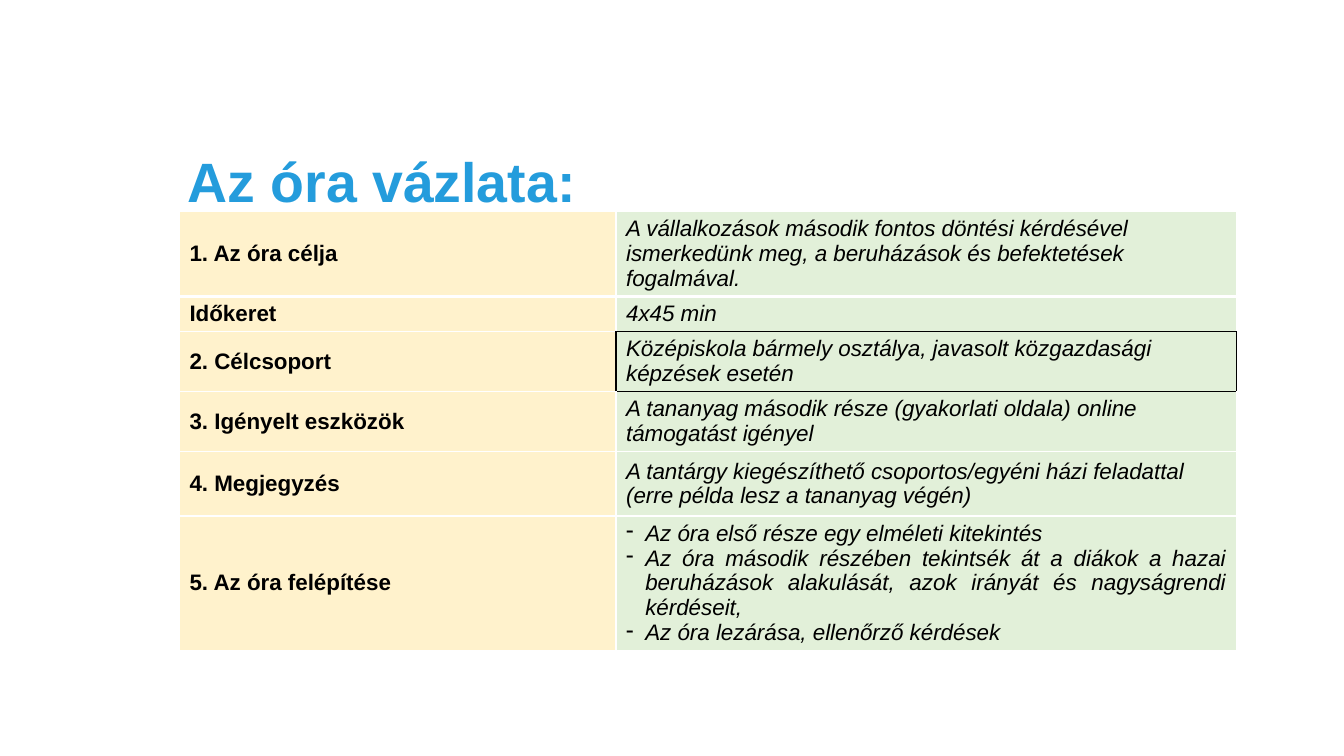
from lxml import etree
from pptx import Presentation
from pptx.dml.color import RGBColor
from pptx.enum.text import MSO_ANCHOR, PP_ALIGN
from pptx.oxml.ns import qn
from pptx.util import Inches, Pt

COLORS = {"title": "249CDC", "label": "FFF2CC", "detail": "E2F0D9",
          "text": "000000", "grid": "FFFFFF", "highlight": "000000"}
FONT = "Arial"
COLUMN_WIDTHS = [4.33, 6.15]
HIGHLIGHTED_ROW = 2

# label, row height, detail paragraphs
OUTLINE = [
    ("1. Az óra célja", 0.83,
     ["A vállalkozások második fontos döntési kérdésével ismerkedünk meg, "
      "a beruházások és befektetések fogalmával."]),
    ("Időkeret", 0.35, ["4x45 min"]),
    ("2. Célcsoport", 0.59,
     ["Középiskola bármely osztálya, javasolt közgazdasági képzések esetén"]),
    ("3. Igényelt eszközök", 0.59,
     ["A tananyag második része (gyakorlati oldala) online támogatást igényel"]),
    ("4. Megjegyzés", 0.64,
     ["A tantárgy kiegészíthető csoportos/egyéni házi feladattal "
      "(erre példa lesz a tananyag végén)"]),
    ("5. Az óra felépítése", 1.33,
     ["Az óra első része egy elméleti kitekintés",
      "Az óra második részében tekintsék át a diákok a hazai beruházások "
      "alakulását, azok irányát és nagyságrendi kérdéseit,",
      "Az óra lezárása, ellenőrző kérdések"]),
]


def style_font(font, size, color, bold=False, italic=False):
    font.name, font.size = FONT, Pt(size)
    font.bold, font.italic = bold, italic
    font.color.rgb = RGBColor.from_string(COLORS[color])


def add_dash(paragraph):
    properties = paragraph._p.get_or_add_pPr()
    properties.set("marL", str(Inches(0.19)))
    properties.set("indent", str(-Inches(0.19)))
    etree.SubElement(properties, qn("a:buChar")).set("char", "-")


def fill_cell(cell, paragraphs, fill, bold=False, italic=False, justify=False):
    cell.fill.solid()
    cell.fill.fore_color.rgb = RGBColor.from_string(COLORS[fill])
    cell.vertical_anchor = MSO_ANCHOR.MIDDLE
    cell.text_frame.text = "\n".join(paragraphs)
    for paragraph in cell.text_frame.paragraphs:
        if len(paragraphs) > 1:
            add_dash(paragraph)
        paragraph.alignment = PP_ALIGN.JUSTIFY if justify else PP_ALIGN.LEFT
        for run in paragraph.runs:
            style_font(run.font, 16, "text", bold, italic)


def set_borders(cell, row, column):
    """Draw white grid lines, black around the highlighted detail cell."""
    highlighted = set()
    if column == 1:
        highlighted = {HIGHLIGHTED_ROW: set("LRTB"), HIGHLIGHTED_ROW - 1: {"B"},
                       HIGHLIGHTED_ROW + 1: {"T"}}.get(row, set())
    elif row == HIGHLIGHTED_ROW:
        highlighted = {"R"}
    properties = cell._tc.get_or_add_tcPr()
    for position, side in enumerate("LRTB"):
        under_first_row = (row, side) in {(0, "B"), (1, "T")}
        line = etree.Element(qn(f"a:ln{side}"))
        line.set("w", str(Pt(3 if under_first_row else 1)))
        solid = etree.SubElement(line, qn("a:solidFill"))
        color = "highlight" if side in highlighted else "grid"
        etree.SubElement(solid, qn("a:srgbClr")).set("val", COLORS[color])
        properties.insert(position, line)


def place_title(slide, left, top, width, height):
    title = slide.shapes.title
    title.left, title.top = Inches(left), Inches(top)
    title.width, title.height = Inches(width), Inches(height)
    frame = title.text_frame
    frame.text = "Az óra vázlata:"
    frame.word_wrap = True
    frame.vertical_anchor = MSO_ANCHOR.TOP
    frame.margin_top = Inches(0.38)
    heading = frame.paragraphs[0]
    heading.alignment = PP_ALIGN.LEFT
    heading.line_spacing = 0.9
    style_font(heading.runs[0].font, 39.6, "title", bold=True)


def place_outline(slide, left, top):
    heights = [height for _, height, _ in OUTLINE]
    table = slide.shapes.add_table(
        len(OUTLINE), len(COLUMN_WIDTHS), Inches(left), Inches(top),
        Inches(sum(COLUMN_WIDTHS)), Inches(sum(heights))).table
    table.first_row = table.horz_banding = False
    for column, width in zip(table.columns, COLUMN_WIDTHS):
        column.width = Inches(width)
    for row, (label, height, details) in enumerate(OUTLINE):
        table.rows[row].height = Inches(height)
        fill_cell(table.cell(row, 0), [label], "label", bold=True, justify=True)
        fill_cell(table.cell(row, 1), details, "detail", italic=True,
                  justify=len(details) > 1)
        for column in range(len(COLUMN_WIDTHS)):
            set_borders(table.cell(row, column), row, column)


def main():
    presentation = Presentation()
    presentation.slide_width, presentation.slide_height = Inches(13.33), Inches(7.5)
    slide = presentation.slides.add_slide(presentation.slide_layouts[5])
    place_title(slide, 1.76, 1.15, 9.22, 5.2)
    place_outline(slide, 1.78, 2.1)
    presentation.save("out.pptx")


if __name__ == "__main__":
    main()
